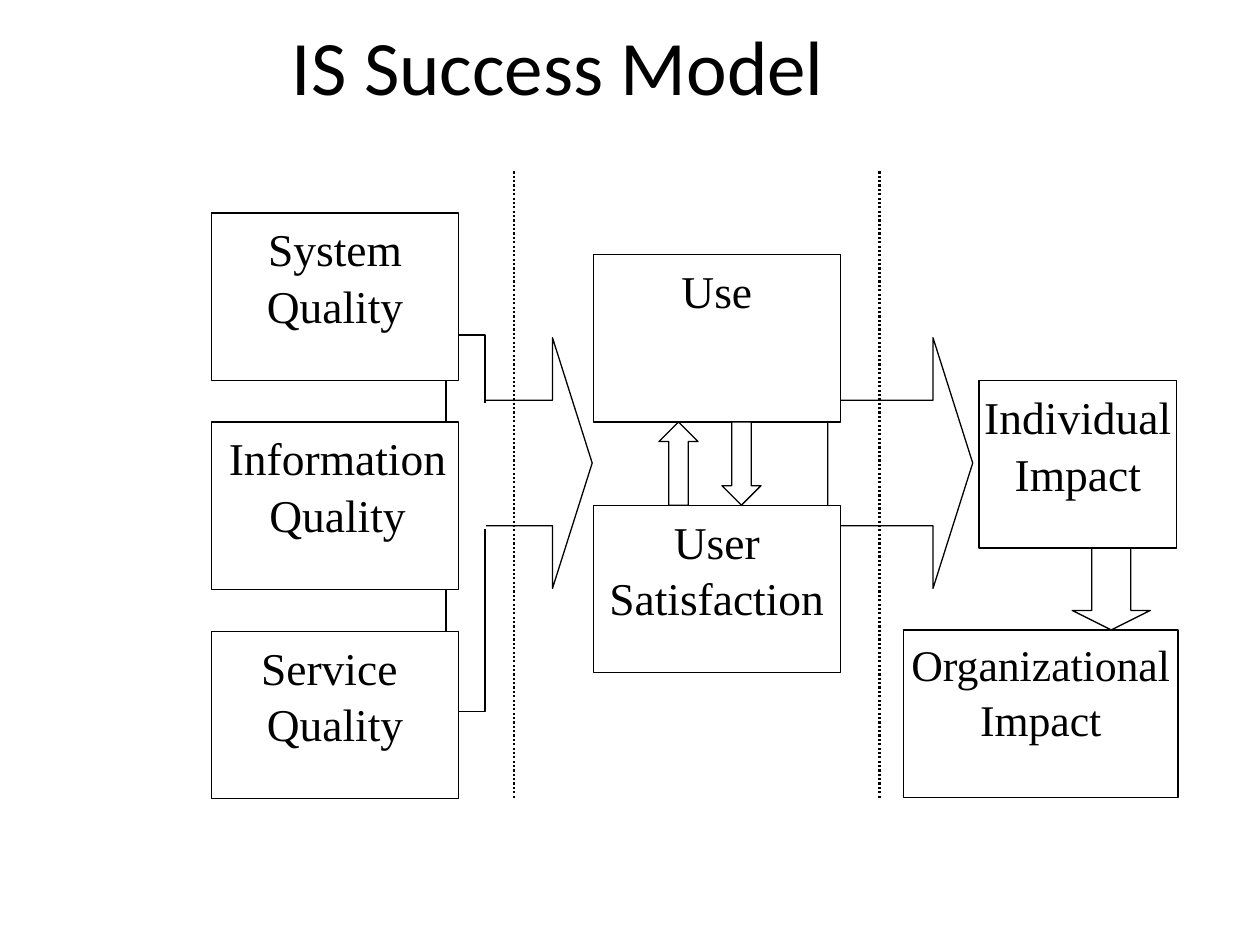
from lxml import etree
from pptx import Presentation
from pptx.dml.color import RGBColor
from pptx.enum.dml import MSO_LINE
from pptx.enum.shapes import MSO_CONNECTOR, MSO_SHAPE
from pptx.enum.text import MSO_ANCHOR, PP_ALIGN
from pptx.oxml.ns import qn
from pptx.util import Inches, Pt

BLACK = RGBColor(0, 0, 0)
WHITE = RGBColor(255, 255, 255)
BOX_HIGH = 1.33

deck = Presentation()
deck.slide_width, deck.slide_height = Inches(10), Inches(7.5)
slide = deck.slides.add_slide(deck.slide_layouts[6])
shapes = slide.shapes


def add_block(kind, left, top, width, height, adjust=()):
    """Add a white preset shape with a thin black outline."""
    block = shapes.add_shape(kind, *map(Inches, (left, top, width, height)))
    block.shadow.inherit = False
    block.fill.solid()
    block.fill.fore_color.rgb = WHITE
    block.line.color.rgb = BLACK
    block.line.width = Pt(0.75)
    for i, value in enumerate(adjust):
        block.adjustments[i] = value
    return block


def add_rule(x, top, bottom, color, width):
    """Add a vertical line without a shadow."""
    rule = shapes.add_connector(MSO_CONNECTOR.STRAIGHT,
                                *map(Inches, (x, top, x, bottom)))
    rule.line.color.rgb = color
    rule.line.width = Pt(width)
    etree.SubElement(rule._element.spPr, qn("a:effectLst"))
    return rule


# Title
title = shapes.add_textbox(*map(Inches, (0.39, 0.08, 8.08, 0.87)))
frame = title.text_frame
frame.word_wrap = True
frame.vertical_anchor = MSO_ANCHOR.MIDDLE
frame.text = "IS Success Model"
para = frame.paragraphs[0]
para.alignment = PP_ALIGN.CENTER
for name, value in {"name": "Calibri", "size": Pt(44)}.items():
    setattr(para.font, name, value)
para.font.color.rgb = BLACK

# Flow arrows and the bracket that joins the qualities, behind the boxes
add_block(MSO_SHAPE.RIGHT_ARROW, 3.55, 2.68, 1.15, 1.99, (0.5, 0.274))
add_block(MSO_SHAPE.RECTANGLE, 3.54, 2.66, 0.31, 2.99)
add_block(MSO_SHAPE.RIGHT_ARROW, 6.57, 2.68, 1.15, 1.99, (0.5, 0.274))
add_block(MSO_SHAPE.DOWN_ARROW, 8.51, 4.34, 0.62, 0.66, (0.5, 0.25))

# Boxes: text, left, top, width, left inset, right inset, text size
boxes = [
    ("System\nQuality", 1.68, 1.69, 1.96, 0.1, 0.1, 26),
    ("Information\nQuality", 1.68, 3.35, 1.96, 0.06, 0.02, 26),
    ("Service \nQuality", 1.68, 5.01, 1.96, 0.06, 0.06, 26),
    ("Use", 4.71, 2.02, 1.96, 0.1, 0.1, 26),
    ("User\nSatisfaction", 4.71, 4.01, 1.96, 0.06, 0.06, 26),
    ("Individual\nImpact", 7.77, 3.02, 1.57, 0.02, 0.02, 26),
    ("Organizational\nImpact", 7.17, 5, 2.18, 0.02, 0.02, 25),
]
for text, left, top, width, inset_l, inset_r, size in boxes:
    box = add_block(MSO_SHAPE.RECTANGLE, left, top, width, BOX_HIGH)
    frame = box.text_frame
    layout = {
        "text": text, "word_wrap": True, "vertical_anchor": MSO_ANCHOR.TOP,
        "margin_left": Inches(inset_l), "margin_right": Inches(inset_r),
        "margin_top": Inches(0.05), "margin_bottom": Inches(0.05),
    }
    for name, value in layout.items():
        setattr(frame, name, value)
    for para in frame.paragraphs:
        para.alignment = PP_ALIGN.CENTER
        para.line_spacing = 1.04
        para.font.name = "Times New Roman"
        para.font.size = Pt(size)
        para.font.color.rgb = BLACK

# Two-way link between use and satisfaction
for kind, left in ((MSO_SHAPE.UP_ARROW, 5.23), (MSO_SHAPE.DOWN_ARROW, 5.73)):
    add_block(kind, left, 3.35, 0.31, 0.66, (0.5, 0.5))

# Dotted stage dividers
for x in (4.08, 6.98):
    rule = add_rule(x, 1.36, 6.33, BLACK, 1.25)
    rule.line.dash_style = MSO_LINE.ROUND_DOT

# White line that opens the bracket into the arrow
add_rule(3.85, 3.2, 4.2, WHITE, 1.5)

deck.save("out.pptx")
